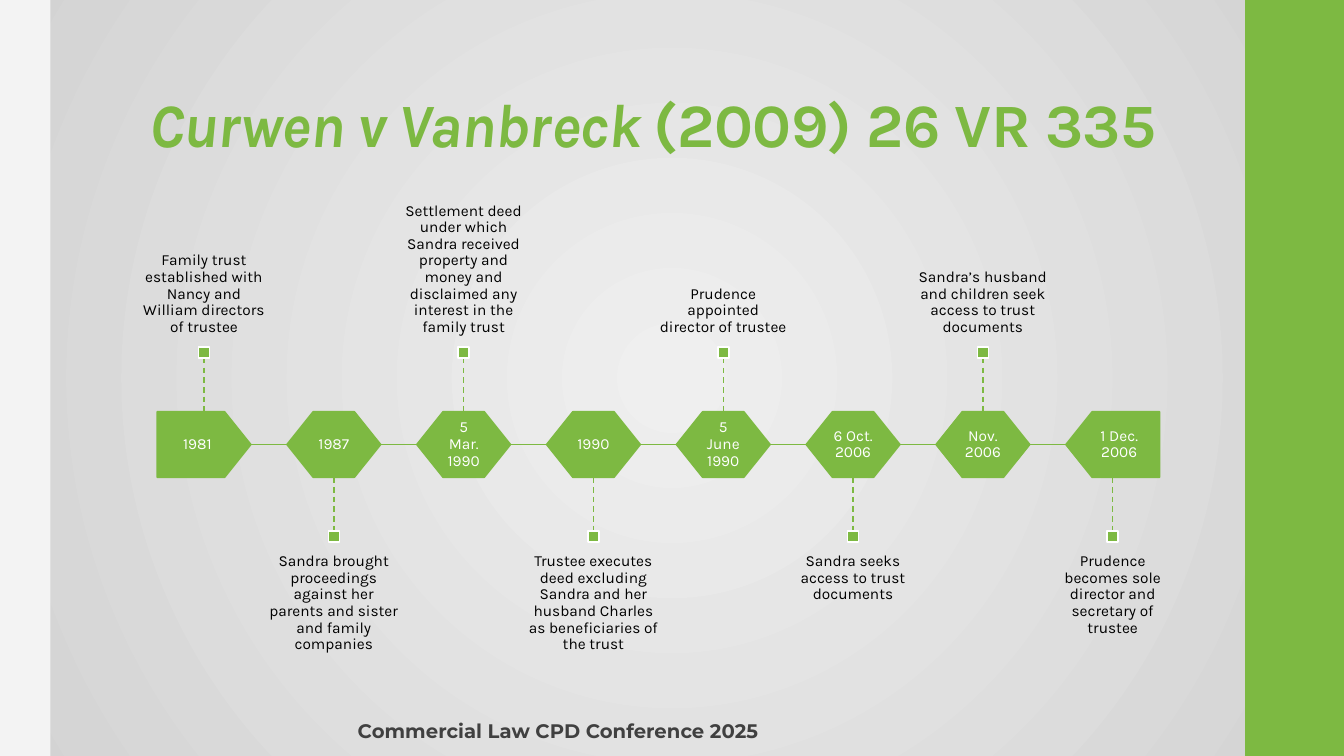
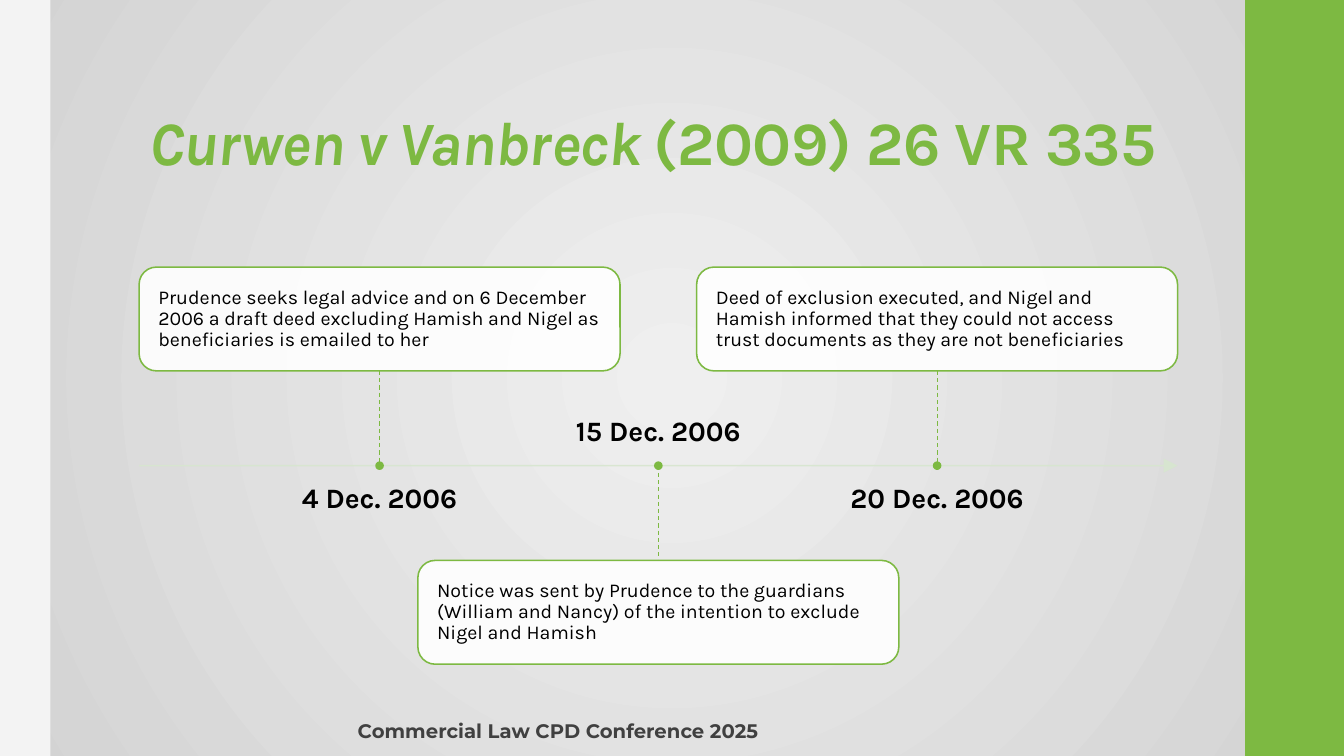
from lxml import etree
from pptx import Presentation
from pptx.dml.color import RGBColor
from pptx.enum.dml import MSO_LINE
from pptx.enum.shapes import MSO_CONNECTOR, MSO_SHAPE
from pptx.enum.text import MSO_ANCHOR, MSO_AUTO_SIZE, PP_ALIGN
from pptx.oxml.ns import qn
from pptx.util import Emu, Pt

PX = 9144  # 100 px to the inch

GREEN = RGBColor(0x7D, 0xB9, 0x42)
PALE_GREEN = RGBColor(0xD7, 0xE6, 0xCF)
WHITE = RGBColor(0xFF, 0xFF, 0xFF)
BLACK = RGBColor(0x00, 0x00, 0x00)
DARK_GREY = RGBColor(0x40, 0x40, 0x40)
EDGE_GREY = RGBColor(0xF3, 0xF3, 0xF3)
BACK_INNER = RGBColor(0xEF, 0xEF, 0xEF)
BACK_OUTER = RGBColor(0xD3, 0xD3, 0xD3)

BODY_FONT, FOOTER_FONT = "Karla", "Montserrat"
LEFT, CENTER = PP_ALIGN.LEFT, PP_ALIGN.CENTER
TOP, MIDDLE, BOTTOM = MSO_ANCHOR.TOP, MSO_ANCHOR.MIDDLE, MSO_ANCHOR.BOTTOM
RECT, ROUNDED, OVAL = MSO_SHAPE.RECTANGLE, MSO_SHAPE.ROUNDED_RECTANGLE, MSO_SHAPE.OVAL
HEXAGON, PENTAGON = MSO_SHAPE.HEXAGON, MSO_SHAPE.PENTAGON
STRAIGHT, DASH = MSO_CONNECTOR.STRAIGHT, MSO_LINE.DASH
NO_AUTOFIT = MSO_AUTO_SIZE.NONE

SLIDE_W, SLIDE_H = 1333, 750
CASE_NAME, CITATION = "Curwen v Vanbreck ", "(2009) 26 VR 335"
FOOTER = "Commercial Law CPD Conference 2025"

HISTORY = [
    ("1981", "Family trust established with Nancy and William directors of trustee"),
    ("1987", "Sandra brought proceedings against her parents and sister and family companies"),
    ("5 Mar. 1990", "Settlement deed under which Sandra received property and money and "
                    "disclaimed any interest in the family trust"),
    ("1990", "Trustee executes deed excluding Sandra and her husband Charles as "
             "beneficiaries of the trust"),
    ("5 June 1990", "Prudence appointed director of trustee"),
    ("6 Oct. 2006", "Sandra seeks access to trust documents"),
    ("Nov. 2006", "Sandra’s husband and children seek access to trust documents"),
    ("1 Dec. 2006", "Prudence becomes sole director and secretary of trustee"),
]
EXCLUSION = [
    ("4 Dec. 2006", "Prudence seeks legal advice and on 6 December 2006 a draft deed "
                    "excluding Hamish and Nigel as beneficiaries is emailed to her"),
    ("15 Dec. 2006", "Notice was sent by Prudence to the guardians (William and Nancy) of "
                     "the intention to exclude Nigel and Hamish"),
    ("20 Dec. 2006", "Deed of exclusion executed, and Nigel and Hamish informed that they "
                     "could not access trust documents as they are not beneficiaries"),
]


def px(*lengths):
    return [Emu(round(length * PX)) for length in lengths]


def set_alpha(element, percent):
    color = next(element.iter(qn("a:srgbClr")))
    etree.SubElement(color, qn("a:alpha")).set("val", str(percent * 1000))


def style_font(font, size, color, bold=False, name=BODY_FONT):
    font.name, font.size, font.bold = name, Pt(size), bold
    font.color.rgb = color


def set_frame(frame, anchor, insets):
    frame.word_wrap = True
    frame.auto_size = NO_AUTOFIT
    frame.vertical_anchor = anchor
    (frame.margin_left, frame.margin_top,
     frame.margin_right, frame.margin_bottom) = px(*insets)


def write(holder, text, size, color=BLACK, bold=False, align=CENTER,
          anchor=TOP, insets=(0, 0, 0, 0), spacing=0.9, name=BODY_FONT):
    frame = holder.text_frame
    set_frame(frame, anchor, insets)
    paragraph = frame.paragraphs[0]
    paragraph.text = text
    paragraph.alignment, paragraph.line_spacing = align, spacing
    style_font(paragraph.font, size, color, bold, name)


def add_label(slide, box, text, size, **style):
    label = slide.shapes.add_textbox(*px(*box))
    write(label, text, size, **style)
    return label


def add_block(slide, kind, box, fill, line=None):
    block = slide.shapes.add_shape(kind, *px(*box))
    block.shadow.inherit = False
    block.fill.solid()
    block.fill.fore_color.rgb = fill
    if line is None:
        block.line.fill.background()
    else:
        block.line.color.rgb = line
        block.line.width = Pt(1.1)
    return block


def add_line(slide, start, end, color=GREEN, width=1.1, dash=None):
    rule = slide.shapes.add_connector(STRAIGHT, *px(*start, *end))
    rule.line.color.rgb = color
    rule.line.width = Pt(width)
    if dash is not None:
        rule.line.dash_style = dash
    etree.SubElement(rule.element.spPr, qn("a:effectLst"))
    return rule


def set_background(layout):
    fill = layout.background.fill
    fill.gradient()
    for stop, color, position in zip(fill.gradient_stops, (BACK_INNER, BACK_OUTER), (0, 1)):
        stop.color.rgb, stop.position = color, position
    # Turn the linear gradient into a circular one
    linear = next(layout.element.iter(qn("a:lin")))
    circle = etree.Element(qn("a:path"), path="circle")
    etree.SubElement(circle, qn("a:fillToRect"), l="100000", t="100000", r="100000", b="100000")
    linear.getparent().replace(linear, circle)


def decorate_layout(layout, slide):
    """Draw bands and footer, then hand them to the layout that all slides share."""
    set_background(layout)
    right_band = add_block(slide, RECT, (1235, 0, SLIDE_W - 1235, SLIDE_H), GREEN)
    footer = add_label(slide, (345, 708, 824, 34), FOOTER, 14, color=DARK_GREY, bold=True,
                       align=LEFT, insets=(10, 5, 10, 5), spacing=1.0, name=FOOTER_FONT)
    left_band = add_block(slide, RECT, (0, 0, 50, SLIDE_H), EDGE_GREY)
    for part in (right_band, footer, left_band):
        layout.shapes.element.append(part.element)


def set_title(slide, box):
    title = slide.shapes.title
    title.left, title.top, title.width, title.height = px(*box)
    set_frame(title.text_frame, BOTTOM, (10, 3, 10, 5))
    paragraph = title.text_frame.paragraphs[0]
    paragraph.alignment, paragraph.line_spacing = LEFT, 0.9
    style_font(paragraph.font, 44, GREEN, bold=True)
    for text, italic in ((CASE_NAME, True), (CITATION, False)):
        run = paragraph.add_run()
        run.text = text
        run.font.italic = italic
    # Tighten the letter spacing by half a point
    for properties in title.element.iter(qn("a:rPr")):
        properties.set("spc", "-50")


def add_history(slide, box, events):
    """Row of date nodes with descriptions alternately above and below."""
    left, top, width, height = box
    node_w, node_h, label_h, marker = 93, 65, 172, 11
    column = width / len(events)
    axis = top + height / 2
    last = len(events) - 1
    for i, (date, description) in enumerate(events):
        column_left = left + i * column
        center = column_left + column / 2
        node_left, node_top = center - node_w / 2, axis - node_h / 2
        above = i % 2 == 0

        # Date node: end pieces are pentagons, the last one turned round
        is_end = i in (0, last)
        node = add_block(slide, PENTAGON if is_end else HEXAGON,
                         (node_left, node_top, node_w, node_h), GREEN, GREEN)
        node.adjustments[0] = 0.4
        if i == last:
            node.rotation = 180
        if is_end:
            date_box = (node_left + (13 if i else 0), node_top, 80, node_h)
        else:
            date_box = (center - 29.5, axis - 20.5, 59, 41)
        add_label(slide, date_box, date, 11, color=WHITE, anchor=MIDDLE, insets=(9, 9, 9, 9))

        # Description, stem and marker
        label_top = top if above else top + height - label_h
        marker_top = top + label_h if above else label_top - marker
        stem = (marker_top + marker, node_top) if above else (node_top + node_h, marker_top)
        add_label(slide, (column_left, label_top, column, label_h), description, 11,
                  anchor=BOTTOM if above else TOP, insets=(0, 11, 0, 11))
        add_line(slide, (center, stem[0]), (center, stem[1]), width=1, dash=DASH)
        add_block(slide, RECT, (center - marker / 2, marker_top, marker, marker), GREEN, WHITE)

        # Link to the next node
        if i < last:
            node_right = node_left + node_w
            add_line(slide, (node_right, axis), (node_left + column, axis))


def add_exclusion(slide, box, events):
    """Arrow axis with dated cards alternately above and below."""
    left, top, width, height = box
    card_w, card_h, dot = 477, 103, 7
    date_w, date_h, date_gap = 420, 56, 18
    axis = top + height / 2
    pitch = (width - card_w) / (len(events) - 1)

    # Axis with arrowhead
    arrow = add_line(slide, (left, axis), (left + width, axis), PALE_GREEN)
    set_alpha(arrow.element.spPr, 90)
    etree.SubElement(arrow.element.spPr.find(qn("a:ln")), qn("a:tailEnd"),
                     type="triangle", w="lg", len="lg")

    for i, (date, description) in enumerate(events):
        card_left = left + i * pitch
        center = card_left + card_w / 2
        above = i % 2 == 0
        card_top = top if above else top + height - card_h
        date_top = axis + date_gap if above else axis - date_gap - date_h
        stem = (top + card_h, axis) if above else (axis, card_top)

        add_label(slide, (center - date_w / 2, date_top, date_w, date_h), date, 20,
                  bold=True, anchor=TOP if above else BOTTOM)
        card = add_block(slide, ROUNDED, (card_left, card_top, card_w, card_h), WHITE, GREEN)
        set_alpha(card.element.spPr, 90)
        write(card, description, 14, align=LEFT, anchor=MIDDLE, insets=(14, 14, 14, 14))
        add_line(slide, (center, stem[0]), (center, stem[1]), width=0.75, dash=DASH)
        add_block(slide, OVAL, (center - dot / 2, axis - dot / 2, dot, dot), GREEN, GREEN)


def main():
    deck = Presentation()
    deck.slide_width, deck.slide_height = px(SLIDE_W, SLIDE_H)
    layout = deck.slide_layouts[5]  # Title Only

    history = deck.slides.add_slide(layout)
    decorate_layout(layout, history)
    set_title(history, (138, 49, 1030, 116))
    add_history(history, (138, 172, 1030, 538), HISTORY)

    exclusion = deck.slides.add_slide(layout)
    set_title(exclusion, (138, 83, 1030, 99))
    add_exclusion(exclusion, (138, 265, 1030, 394), EXCLUSION)

    deck.save("out.pptx")


if __name__ == "__main__":
    main()
